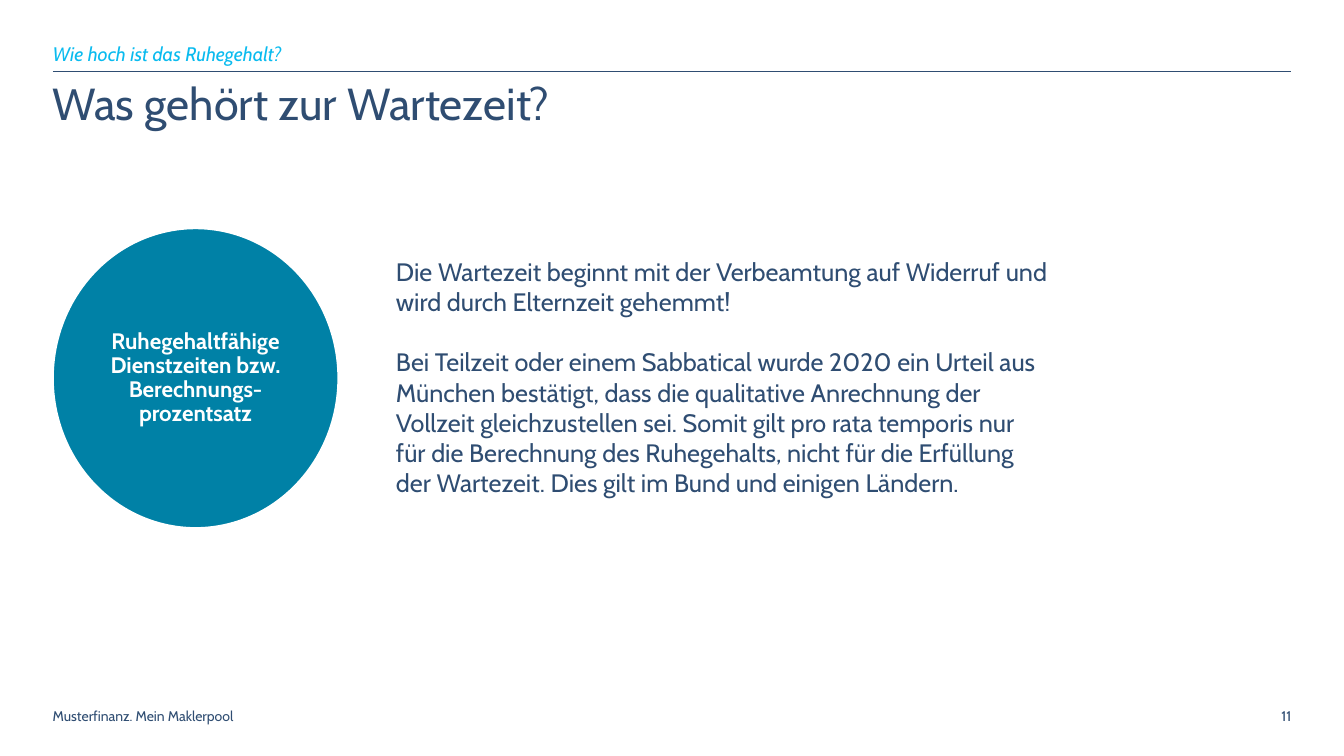
import pptx
import pptx.util
import pptx.dml.color
import pptx.enum.shapes
import pptx.enum.text

Cm, Pt = pptx.util.Cm, pptx.util.Pt
ALIGN = pptx.enum.text.PP_ALIGN
ANCHOR = pptx.enum.text.MSO_ANCHOR
SHAPE = pptx.enum.shapes.MSO_SHAPE

# Content
KICKER = "Wie hoch ist das Ruhegehalt?"
TITLE = "Was gehört zur Wartezeit?"
TOPIC = "Ruhegehaltfähige Dienstzeiten bzw. Berechnungs-prozentsatz"
EXPLANATION = [
    "Die Wartezeit beginnt mit der Verbeamtung auf Widerruf und wird durch "
    "Elternzeit gehemmt!",
    "Bei Teilzeit oder einem Sabbatical wurde 2020 ein Urteil aus München "
    "bestätigt, dass die qualitative Anrechnung der Vollzeit gleichzustellen "
    "sei. Somit gilt pro rata temporis nur für die Berechnung des "
    "Ruhegehalts, nicht für die Erfüllung der Wartezeit. Dies gilt im Bund "
    "und einigen Ländern.",
]
FOOTER = "Musterfinanz. Mein Maklerpool"
PAGE = "11"

COLORS = {"navy": "2F4D72", "cyan": "0ABBEF", "teal": "0081A6", "white": "FFFFFF"}
FONT = "Cabin"

# Layout in centimetres
WIDTH, HEIGHT = 33.87, 19.05
LEFT, RIGHT = 1.33, 32.54
CONTENT = RIGHT - LEFT
FOOTER_TOP, FOOTER_HEIGHT, PAGE_WIDTH = 17.83, 0.43, 1.27
CIRCLE = (1.33, 5.75, 7.2, 7.56)
LABEL_SIDE = 4.8


def color(name):
    return pptx.dml.color.RGBColor.from_string(COLORS[name])


def write(shape, paragraphs, size, ink="navy", bold=False, italic=False,
          align=ALIGN.LEFT, anchor=ANCHOR.TOP, inset=(0, 0), spacing=None,
          gap=0, wrap=True):
    frame = shape.text_frame
    frame.word_wrap = wrap
    frame.vertical_anchor = anchor
    frame.margin_left = frame.margin_right = Cm(inset[0])
    frame.margin_top = frame.margin_bottom = Cm(inset[1])
    for index, text in enumerate(paragraphs):
        paragraph = frame.add_paragraph() if index else frame.paragraphs[0]
        paragraph.alignment = align
        if spacing:
            paragraph.line_spacing = spacing
        if index:
            paragraph.space_before = Pt(gap)
        run = paragraph.add_run()
        run.text = text
        run.font.name = FONT
        run.font.size = Pt(size)
        run.font.bold = bold
        run.font.italic = italic
        run.font.color.rgb = color(ink)


def box(left, top, width, height):
    return slide.shapes.add_textbox(Cm(left), Cm(top), Cm(width), Cm(height))


def solid(kind, left, top, width, height):
    shape = topic_group.shapes.add_shape(
        kind, Cm(left), Cm(top), Cm(width), Cm(height))
    shape.shadow.inherit = False
    shape.fill.solid()
    shape.fill.fore_color.rgb = color("teal")
    return shape


deck = pptx.Presentation()
deck.slide_width, deck.slide_height = Cm(WIDTH), Cm(HEIGHT)
slide = deck.slides.add_slide(deck.slide_layouts[6])

# Header rule
rule = slide.shapes.add_connector(
    pptx.enum.shapes.MSO_CONNECTOR.STRAIGHT, Cm(LEFT), Cm(1.8), Cm(RIGHT), Cm(1.8))
rule.line.color.rgb = color("navy")
rule.line.width = Pt(0.5)
rule._element.spPr.append(pptx.oxml.parse_xml(
    '<a:effectLst xmlns:a="http://schemas.openxmlformats.org/drawingml/2006/main"/>'))

# Footer
write(box(LEFT, FOOTER_TOP, 4.75, FOOTER_HEIGHT), [FOOTER], 10,
      anchor=ANCHOR.MIDDLE, wrap=False)
write(box(RIGHT - PAGE_WIDTH, FOOTER_TOP, PAGE_WIDTH, FOOTER_HEIGHT), [PAGE], 10,
      align=ALIGN.RIGHT, anchor=ANCHOR.MIDDLE)

# Title and kicker
write(box(LEFT, 2.06, CONTENT, 1.22), [TITLE], 32, spacing=0.9)
write(box(LEFT, 1.04, CONTENT, 0.61), [KICKER], 14, ink="cyan", italic=True,
      anchor=ANCHOR.BOTTOM)

# Topic circle with its label centred inside
topic_group = slide.shapes.add_group_shape()
circle = solid(SHAPE.OVAL, *CIRCLE)
circle.line.color.rgb = color("white")
circle.line.width = Pt(1.5)
left, top, width, height = CIRCLE
label = solid(SHAPE.RECTANGLE, left + (width - LABEL_SIDE) / 2,
              top + (height - LABEL_SIDE) / 2, LABEL_SIDE, LABEL_SIDE)
label.line.fill.background()
write(label, [TOPIC], 16, ink="white", bold=True, align=ALIGN.CENTER,
      anchor=ANCHOR.MIDDLE, inset=(0.05, 0.05), spacing=0.9)

# Explanation
write(box(9.73, 6.32, 16.94, 6.4), EXPLANATION, 18, inset=(0.25, 0.13), gap=21.6)

deck.save("out.pptx")
